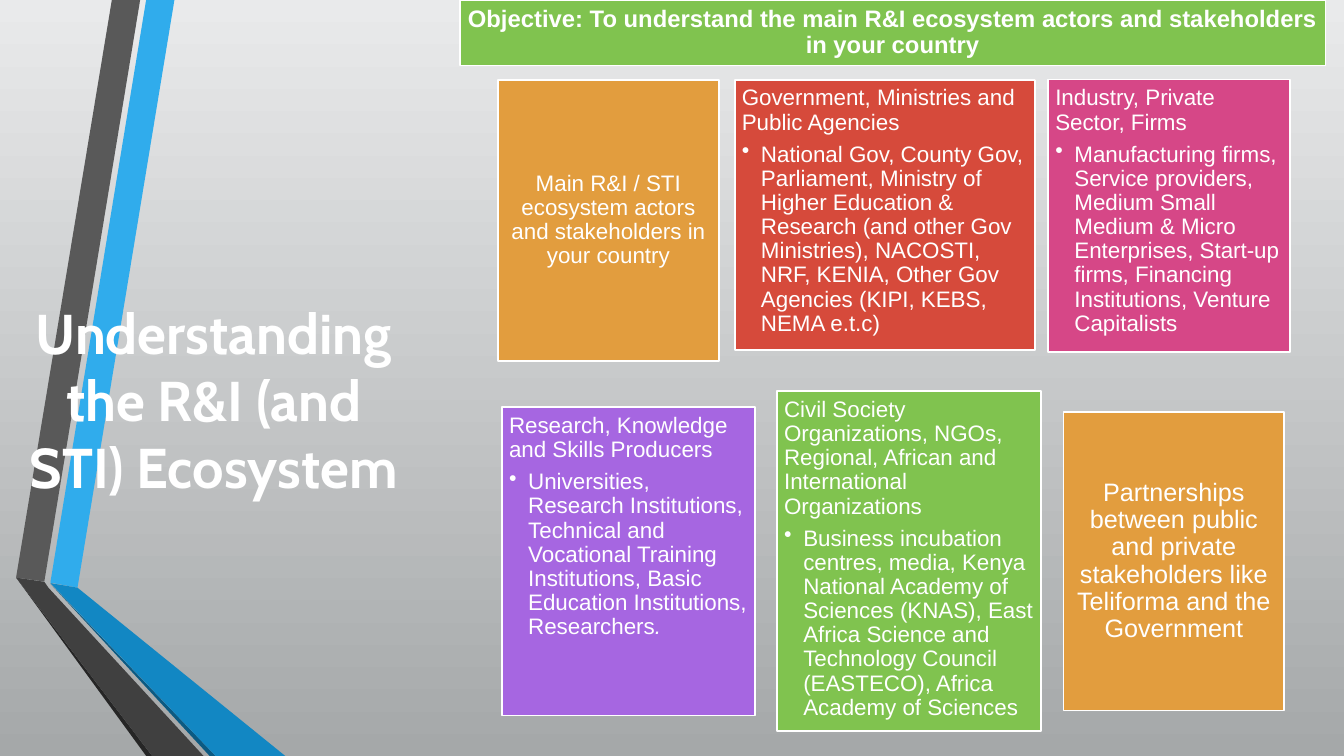
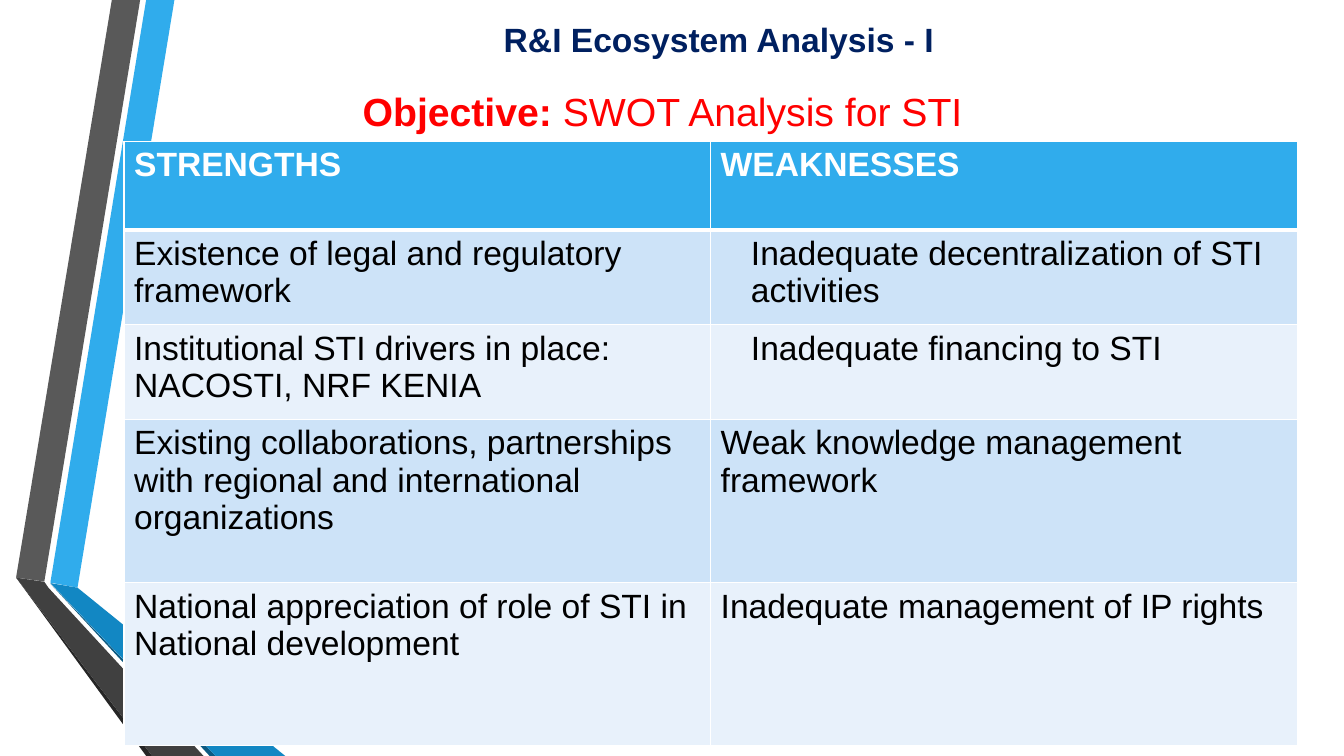
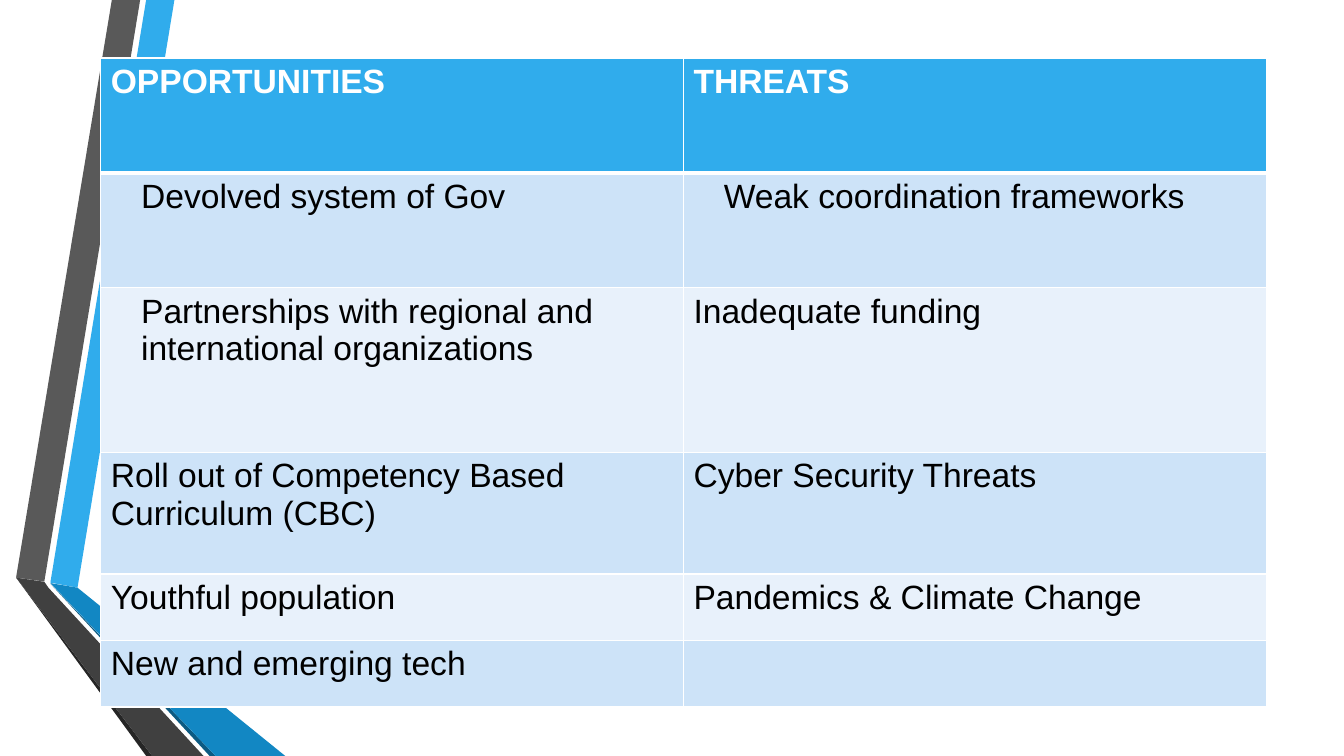
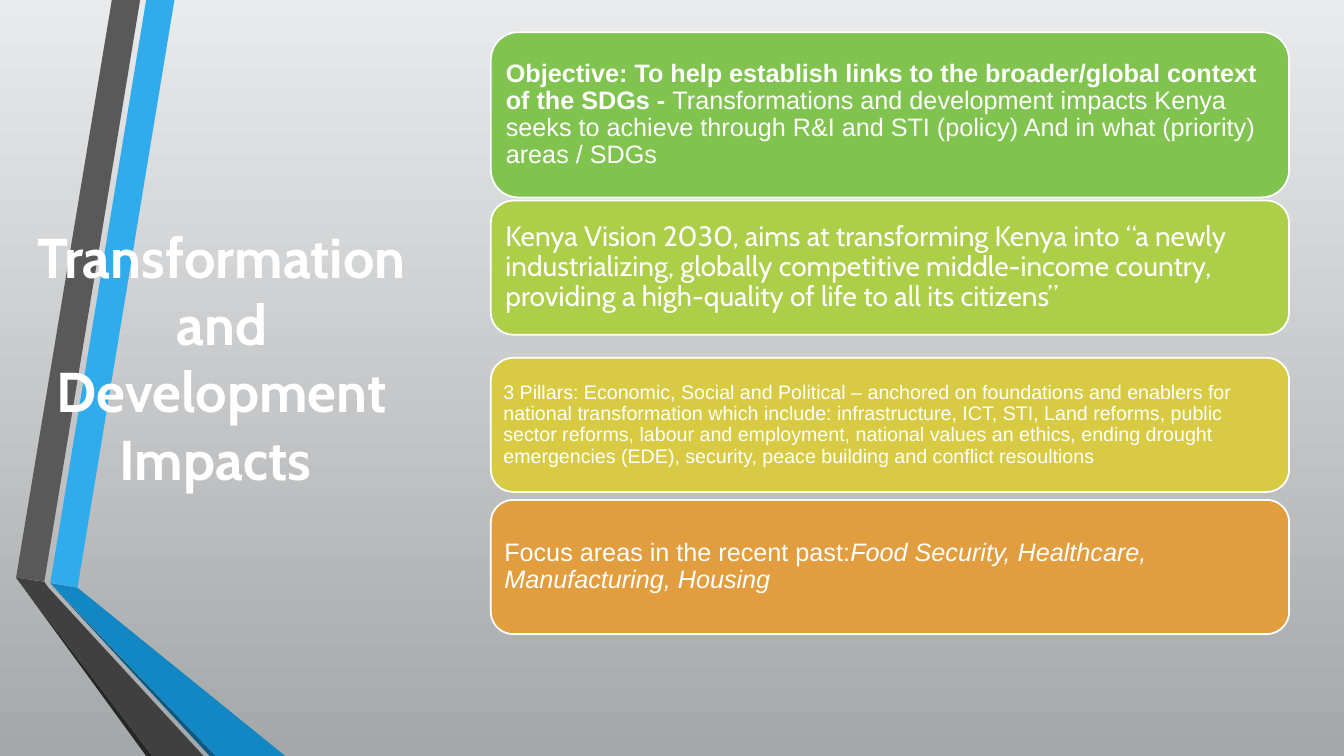
from lxml import etree
from pptx import Presentation
from pptx.dml.color import RGBColor
from pptx.enum.shapes import MSO_SHAPE as Shape
from pptx.enum.text import MSO_ANCHOR as Anchor, PP_ALIGN as Align
from pptx.oxml.ns import qn
from pptx.util import Pt

WHITE = RGBColor(0xFF, 0xFF, 0xFF)
BLACK = RGBColor(0x00, 0x00, 0x00)
NAVY = RGBColor(0x00, 0x20, 0x60)
BRIGHT_RED = RGBColor(0xFF, 0x00, 0x00)
GREY_TOP = RGBColor(0xE9, 0xEA, 0xEB)
GREY_BOTTOM = RGBColor(0xA5, 0xA8, 0xA9)
BLUE = RGBColor(0x30, 0xAC, 0xEC)
DEEP_BLUE = RGBColor(0x12, 0x87, 0xC3)
SHADE_BLUE = RGBColor(0x0C, 0x5A, 0x82)
GREY = RGBColor(0x59, 0x59, 0x59)
DARK_GREY = RGBColor(0x40, 0x40, 0x40)
SHADE_GREY = RGBColor(0x26, 0x26, 0x26)
ROW_DARK = RGBColor(0xCD, 0xE3, 0xF8)
ROW_LIGHT = RGBColor(0xE8, 0xF1, 0xFB)
GREEN = RGBColor(0x80, 0xC3, 0x4F)
LIME = RGBColor(0xAD, 0xCE, 0x49)
YELLOW = RGBColor(0xD8, 0xCB, 0x43)
ORANGE = RGBColor(0xE2, 0x9D, 0x3E)
RED = RGBColor(0xD6, 0x4A, 0x3B)
PINK = RGBColor(0xD6, 0x47, 0x87)
PURPLE = RGBColor(0xA6, 0x66, 0xE1)

BODY_FONT, TITLE_FONT = "Arial", "Cabin"
INDENT = 21.6
BULLET_INDENT = 13.7


def write_text(frame, paragraphs, size=16, font=BODY_FONT, color=WHITE, bold=False,
               align=Align.LEFT, anchor=Anchor.TOP, line_spacing=None, space_after=None,
               indent=0, inset=None):
    """Fill a text frame; a paragraph is a list of (text, bold, italic) runs or a string.

    Paragraphs after the first are bulleted.
    """
    frame.word_wrap = True
    frame.vertical_anchor = anchor
    if inset is not None:
        frame.margin_left = frame.margin_right = Pt(inset)
        frame.margin_top = frame.margin_bottom = Pt(inset)
    for index, runs in enumerate(paragraphs):
        paragraph = frame.add_paragraph() if index else frame.paragraphs[0]
        paragraph.alignment = align
        if line_spacing:
            paragraph.line_spacing = line_spacing
        if space_after is not None:
            paragraph.space_after = Pt(0.15 * size if index else space_after)
        properties = paragraph._p.get_or_add_pPr()
        if index:
            paragraph.level = 1
            properties.set("marL", str(Pt(BULLET_INDENT)))
            properties.set("indent", str(-Pt(BULLET_INDENT)))
            etree.SubElement(properties, qn("a:buChar")).set("char", "•")
        elif indent:
            properties.set("marL", str(Pt(indent)))
            properties.set("indent", "0")
        for text, run_bold, italic in [(runs, bold, False)] if isinstance(runs, str) else runs:
            run = paragraph.add_run()
            run.text = text
            run.font.name = font
            run.font.size = Pt(size)
            run.font.bold = run_bold
            run.font.italic = italic
            run.font.color.rgb = color


def add_panel(slide, kind, place, fill, paragraphs, **text_format):
    """Add a filled, white-edged shape that holds text."""
    shape = slide.shapes.add_shape(kind, *map(Pt, place))
    shape.shadow.inherit = False
    shape.fill.solid()
    shape.fill.fore_color.rgb = fill
    shape.line.color.rgb = WHITE
    shape.line.width = Pt(1.25)
    size = text_format.get("size", 16)
    text_format = {"inset": 5, "line_spacing": 0.9, "space_after": 0.35 * size, **text_format}
    write_text(shape.text_frame, paragraphs, **text_format)


presentation = Presentation()
presentation.slide_width, presentation.slide_height = Pt(960), Pt(540)
blank = presentation.slide_layouts[6]
for placeholder in list(blank.placeholders):
    blank.shapes.element.remove(placeholder.element)
slides = [presentation.slides.add_slide(blank) for _ in range(4)]
actors, analysis, outlook, impacts = slides

# Folded ribbons, built once and moved to the shared layout
RIBBONS = [
    (BLUE, [(36, 416.2), (55.4, 419.8), (124.6, 0), (104.4, 0)]),
    (GREY, [(100.1, 0), (79.9, 0), (11.5, 412.6), (31.7, 415.4)]),
    (SHADE_GREY, [(11.5, 412.6), (104.4, 540), (108.7, 540)]),
    (SHADE_BLUE, [(36, 416.9), (149.8, 540), (154.1, 540)]),
    (DEEP_BLUE, [(36, 416.5), (154.1, 540), (203.8, 540), (55.4, 419.8)]),
    (DARK_GREY, [(145.4, 540), (34.6, 419.8), (31.7, 415.6), (11.5, 412.6), (108.7, 540)]),
]
for color, points in RIBBONS:
    corners = [(Pt(x), Pt(y)) for x, y in points]
    builder = actors.shapes.build_freeform(*corners[0])
    builder.add_line_segments(corners[1:], close=True)
    ribbon = builder.convert_to_shape()
    ribbon.shadow.inherit = False
    ribbon.fill.solid()
    ribbon.fill.fore_color.rgb = color
    ribbon.line.fill.background()
    blank.shapes.element.append(ribbon.element)

# Backgrounds
for slide in (analysis, outlook):
    slide.background.fill.solid()
    slide.background.fill.fore_color.rgb = WHITE
for slide in (actors, impacts):
    fill = slide.background.fill
    fill.gradient()
    fill.gradient_angle = 270
    for stop, color, position in zip(fill.gradient_stops, (GREY_TOP, GREY_BOTTOM), (0, 1)):
        stop.color.rgb = color
        stop.position = position

# Side titles
SIDE_TITLES = [
    (actors, (13, 84.2, 279.4, 401.8), "Understanding the R&I (and STI) Ecosystem "),
    (impacts, (12.2, 54, 292.3, 401.8), "Transformation and Development Impacts "),
]
for slide, place, title in SIDE_TITLES:
    box = slide.shapes.add_textbox(*map(Pt, place))
    write_text(box.text_frame, [title], size=40, font=TITLE_FONT, bold=True,
               align=Align.CENTER, anchor=Anchor.MIDDLE, space_after=6)

# Slide 1: actors
CENTERED = {"align": Align.CENTER, "anchor": Anchor.MIDDLE}
ACTOR_PANELS = [
    ((328.3, 0, 618.5, 46.8), GREEN,
     ["Objective: To understand the main R&I ecosystem actors and stakeholders in your country"],
     {"size": 17, "bold": True, **CENTERED}),
    ((355.7, 56.9, 157.7, 200.9), ORANGE,
     ["Main R&I / STI ecosystem actors and stakeholders in your country"], CENTERED),
    ((524.9, 56.9, 214.6, 193), RED,
     ["Government, Ministries and Public Agencies",
      "National Gov, County Gov, Parliament, Ministry of Higher Education & Research "
      "(and other Gov Ministries), NACOSTI, NRF, KENIA, Other Gov Agencies "
      "(KIPI, KEBS, NEMA e.t.c)"], {}),
    ((748.8, 56.9, 172.8, 194.4), PINK,
     ["Industry, Private Sector, Firms",
      "Manufacturing firms, Service providers, Medium Small Medium & Micro Enterprises, "
      "Start-up firms, Financing Institutions, Venture Capitalists"], {}),
    ((358.6, 290.9, 180.7, 220.3), PURPLE,
     ["Research, Knowledge and Skills Producers",
      [("Universities, Research Institutions, Technical and Vocational Training "
        "Institutions, Basic Education Institutions, Researchers", False, False),
       (".", False, True)]], {}),
    ((555.1, 279.4, 188.6, 242.6), GREEN,
     ["Civil Society Organizations, NGOs, Regional, African and International Organizations",
      "Business incubation centres, media, Kenya National Academy of Sciences (KNAS), "
      "East Africa Science and Technology Council (EASTECO), Africa Academy of Sciences"], {}),
    ((759.6, 294.5, 157.7, 213.1), ORANGE,
     ["Partnerships between public and private stakeholders like Teliforma and the Government"],
     {"size": 18, **CENTERED}),
]
for place, fill, paragraphs, text_format in ACTOR_PANELS:
    add_panel(actors, Shape.RECTANGLE, place, fill, paragraphs, **text_format)

# Slide 2: headings
heading = analysis.shapes.add_textbox(Pt(164.9), Pt(10.1), Pt(697), Pt(36))
write_text(heading.text_frame, ["R&I Ecosystem Analysis - I"], size=24, color=NAVY,
           bold=True, align=Align.CENTER)
objective = analysis.shapes.add_textbox(Pt(230.4), Pt(59), Pt(729.6), Pt(63.4))
write_text(objective.text_frame,
           [[("Objective: ", True, False), ("SWOT Analysis for STI", False, False)]],
           size=28, color=BRIGHT_RED, indent=INDENT)

# Slides 2 and 3: SWOT tables, with the (row, column) of indented cells
SWOT_TABLES = [
    (analysis, (88.6, 100.8), 419, (63.4, 67.7, 67.7, 116.6, 116.6), {(1, 1), (2, 1)}, [
        ("STRENGTHS", "WEAKNESSES"),
        ("Existence of legal and regulatory framework",
         "Inadequate decentralization of STI activities"),
        ("Institutional STI drivers in place: NACOSTI, NRF KENIA",
         "Inadequate financing to STI"),
        ("Existing collaborations, partnerships with regional and international organizations",
         "Weak knowledge management framework"),
        ("National appreciation of role of STI in National development",
         "Inadequate management of IP rights"),
    ]),
    (outlook, (72, 41.4), 416.2, (82.1, 82.1, 117.4, 87.1, 47.5, 47.5),
     {(1, 0), (1, 1), (2, 0)}, [
        ("OPPORTUNITIES", "THREATS"),
        ("Devolved system of Gov", "Weak coordination frameworks"),
        ("Partnerships with regional and international organizations", "Inadequate funding"),
        ("Roll out of Competency Based Curriculum (CBC)", "Cyber Security Threats"),
        ("Youthful population", "Pandemics & Climate Change"),
        ("New and emerging tech", ""),
    ]),
]
for slide, (left, top), column_width, heights, indented, rows in SWOT_TABLES:
    table = slide.shapes.add_table(len(rows), 2, Pt(left), Pt(top), Pt(2 * column_width),
                                   Pt(sum(heights))).table
    for column in table.columns:
        column.width = Pt(column_width)
    for row, (height, texts) in enumerate(zip(heights, rows)):
        table.rows[row].height = Pt(height)
        for column, text in enumerate(texts):
            cell = table.cell(row, column)
            properties = cell._tc.get_or_add_tcPr()
            for side in ("lnL", "lnR", "lnT", "lnB"):
                under_header = (row, side) in ((0, "lnB"), (1, "lnT"))
                border = etree.SubElement(properties, qn(f"a:{side}"))
                border.set("w", str(Pt(3 if under_header else 1)))
                line_fill = etree.SubElement(border, qn("a:solidFill"))
                etree.SubElement(line_fill, qn("a:srgbClr")).set("val", str(WHITE))
            cell.fill.solid()
            cell.fill.fore_color.rgb = (ROW_DARK if row % 2 else ROW_LIGHT) if row else BLUE
            if text:
                write_text(cell.text_frame, [text], size=24, color=BLACK if row else WHITE,
                           bold=row == 0, indent=INDENT if (row, column) in indented else 0)

# Slide 4: impacts
IMPACT_PANELS = [
    (23, 118.1, GREEN,
     [("Objective: To help establish links to the broader/global context of the SDGs - ",
       True, False),
      ("Transformations and development impacts Kenya seeks to achieve through R&I and STI "
       "(policy) And in what (priority) areas / SDGs", False, False)],
     {"size": 18}),
    (143.3, 95.8, LIME,
     "Kenya Vision 2030, aims at transforming Kenya into “a newly industrializing, globally "
     "competitive middle-income country, providing a high-quality of life to all its citizens”",
     {"size": 20, "font": TITLE_FONT, "inset": 5.8}),
    (255.6, 95.8, YELLOW,
     "3 Pillars: Economic, Social and Political – anchored on foundations and enablers for "
     "national transformation which include: infrastructure, ICT, STI, Land reforms, public "
     "sector reforms, labour and employment, national values an ethics, ending drought "
     "emergencies (EDE), security, peace building and conflict resoultions",
     {"size": 14, "inset": 4.3}),
    (357.1, 95.8, ORANGE,
     [("Focus areas in the recent past:", False, False),
      ("Food Security, Healthcare, Manufacturing, Housing", False, True)],
     {"size": 18}),
]
for top, height, fill, runs, text_format in IMPACT_PANELS:
    add_panel(impacts, Shape.ROUNDED_RECTANGLE, (350.6, top, 570.2, height), fill, [runs],
              anchor=Anchor.MIDDLE, **text_format)

presentation.save("out.pptx")
